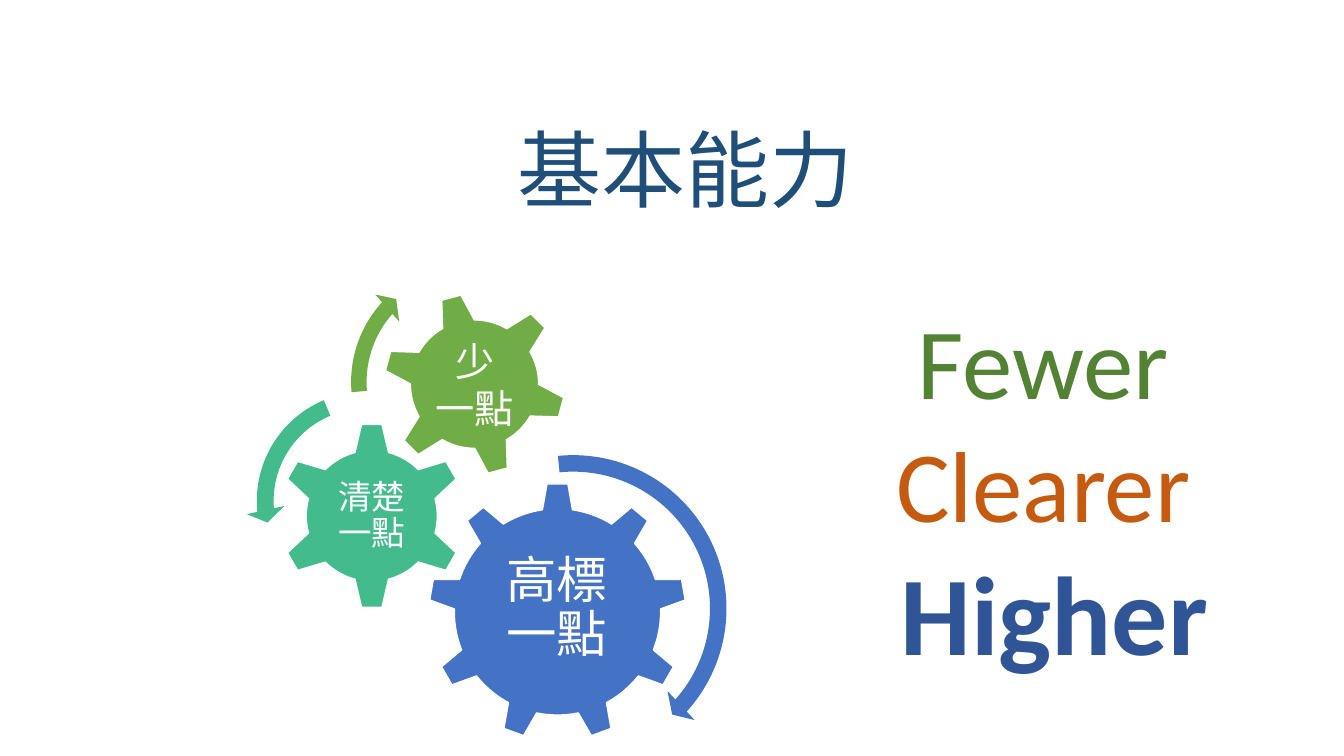
from dataclasses import dataclass

from lxml.etree import SubElement
from pptx import Presentation
from pptx.enum.shapes import MSO_SHAPE as Preset
from pptx.enum.text import MSO_ANCHOR as Anchor, PP_ALIGN as Align
from pptx.dml.color import RGBColor
from pptx.oxml.ns import qn
from pptx.util import Cm, Pt

COLORS = {
    "white": "FFFFFF",
    "black": "000000",
    "title": "1F4E79",
    "fewer": "548235",
    "clearer": "C55A11",
    "higher": "2F5597",
    "blue": "4472C4",
    "teal": "43BB8D",
    "green": "70AD47",
}
LATIN = "Calibri"
CHINESE = "Noto Sans CJK SC"


@dataclass
class Words:
    text: str
    size: int
    color: str
    font: str = LATIN
    bold: bool = False


@dataclass
class TextArea:
    box: tuple[float, float, float, float]
    paragraphs: list[list[Words]]
    anchor: Anchor = Anchor.TOP
    margins: tuple[float, float] = (0.25, 0.13)
    line_spacing: float = 0.9
    space_before: int = 0


@dataclass
class Gear:
    preset: Preset
    left: float
    top: float
    size: float
    color: str
    label: TextArea
    rotation: int = 0


@dataclass
class Arrow:
    preset: Preset
    left: float
    top: float
    size: float
    color: str
    adjustments: tuple[float, ...]


def rgb(name: str) -> RGBColor:
    return RGBColor.from_string(COLORS[name])


def label(box: tuple[float, float, float, float], lines: list[str], size: int,
          margin: float, line_spacing: float = 0.9) -> TextArea:
    paragraphs = [[Words(line, size, "white", CHINESE)] for line in lines]
    return TextArea(box, paragraphs, Anchor.MIDDLE, (margin, margin), line_spacing)


def add_words(paragraph, words: Words) -> None:
    run = paragraph.add_run()
    run.text = words.text
    font_format = {"name": words.font, "size": Pt(words.size), "bold": words.bold}
    for name, value in font_format.items():
        setattr(run.font, name, value)
    run.font.color.rgb = rgb(words.color)
    if words.font == CHINESE:
        SubElement(run.font._element, qn("a:ea"), typeface=CHINESE)


def add_text(slide, area: TextArea) -> None:
    frame = slide.shapes.add_textbox(*map(Cm, area.box)).text_frame
    side, end = map(Cm, area.margins)
    frame_format = {
        "word_wrap": True,
        "vertical_anchor": area.anchor,
        "margin_left": side,
        "margin_right": side,
        "margin_top": end,
        "margin_bottom": end,
    }
    for name, value in frame_format.items():
        setattr(frame, name, value)
    paragraph_format = {
        "alignment": Align.CENTER,
        "line_spacing": area.line_spacing,
        "space_before": Pt(area.space_before),
    }
    for index, line in enumerate(area.paragraphs):
        paragraph = frame.add_paragraph() if index else frame.paragraphs[0]
        for name, value in paragraph_format.items():
            setattr(paragraph, name, value)
        for words in line:
            add_words(paragraph, words)


def add_filled(slide, item: Gear | Arrow):
    size = Cm(item.size)
    shape = slide.shapes.add_shape(item.preset, Cm(item.left), Cm(item.top), size, size)
    shape.shadow.inherit = False
    shape.fill.solid()
    shape.fill.fore_color.rgb = rgb(item.color)
    return shape


def add_gear(slide, gear: Gear) -> None:
    shape = add_filled(slide, gear)
    shape.rotation = gear.rotation
    shape.line.color.rgb = rgb("white")
    shape.line.width = Pt(1)
    add_text(slide, gear.label)


def add_arrow(slide, arrow: Arrow) -> None:
    shape = add_filled(slide, arrow)
    shape.line.fill.background()
    for index, value in enumerate(arrow.adjustments):
        shape.adjustments[index] = value


TEXTS = [
    TextArea((2.67, 1.73, 29.21, 3.94), [[Words("基本能力", 60, "title", CHINESE)]],
             Anchor.BOTTOM),
    TextArea((18.72, 7.75, 15.14, 10.03), [
        [Words("Fewer", 72, "fewer")],
        [Words("Clearer", 72, "clearer")],
        [Words(" ", 72, "black"), Words("Higher", 80, "higher", bold=True)],
    ], space_before=10),
]
GEARS = [
    Gear(Preset.GEAR_9, 10.8, 12.17, 6.5, "blue",
         label((12.09, 13.69, 3.89, 3.33), ["高標一點"], 36, 0.13)),
    Gear(Preset.GEAR_6, 7.01, 10.64, 4.72, "teal",
         label((8.2, 11.84, 2.34, 2.34), ["清楚一點"], 24, 0.08)),
    Gear(Preset.GEAR_6, 9.65, 7.37, 4.62, "green",
         label((10.67, 8.38, 2.59, 2.59), ["少", "一點"], 28, 0.1, 1.0), 345),
]
ARROWS = [
    Arrow(Preset.CIRCULAR_ARROW, 10.29, 11.18, 8.31, "blue",
          (0.05, 2.99, 25.18, 158.58, 0.06)),
    Arrow(Preset.LEFT_CIRCULAR_ARROW, 6.2, 9.6, 6.05, "teal",
          (0.07, 4.3, 104.89, 148.38, 0.08)),
    Arrow(Preset.CIRCULAR_ARROW, 8.59, 6.38, 6.5, "green",
          (0.06, 3.94, 133.14, 105.08, 0.07)),
]


def main() -> None:
    presentation = Presentation()
    presentation.slide_width = Cm(33.87)
    presentation.slide_height = Cm(19.05)
    slide = presentation.slides.add_slide(presentation.slide_layouts[6])
    for area in TEXTS:
        add_text(slide, area)
    for gear in GEARS:
        add_gear(slide, gear)
    for arrow in ARROWS:
        add_arrow(slide, arrow)
    presentation.save("out.pptx")


if __name__ == "__main__":
    main()
